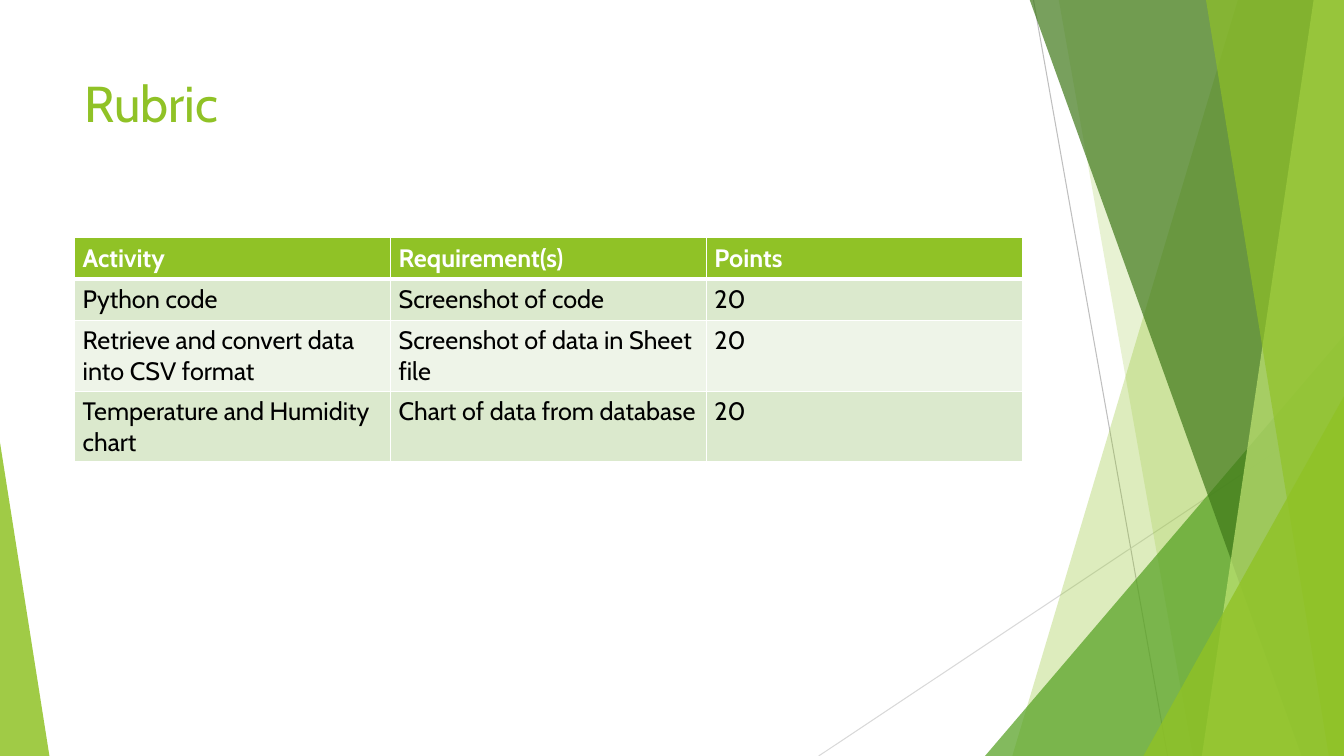
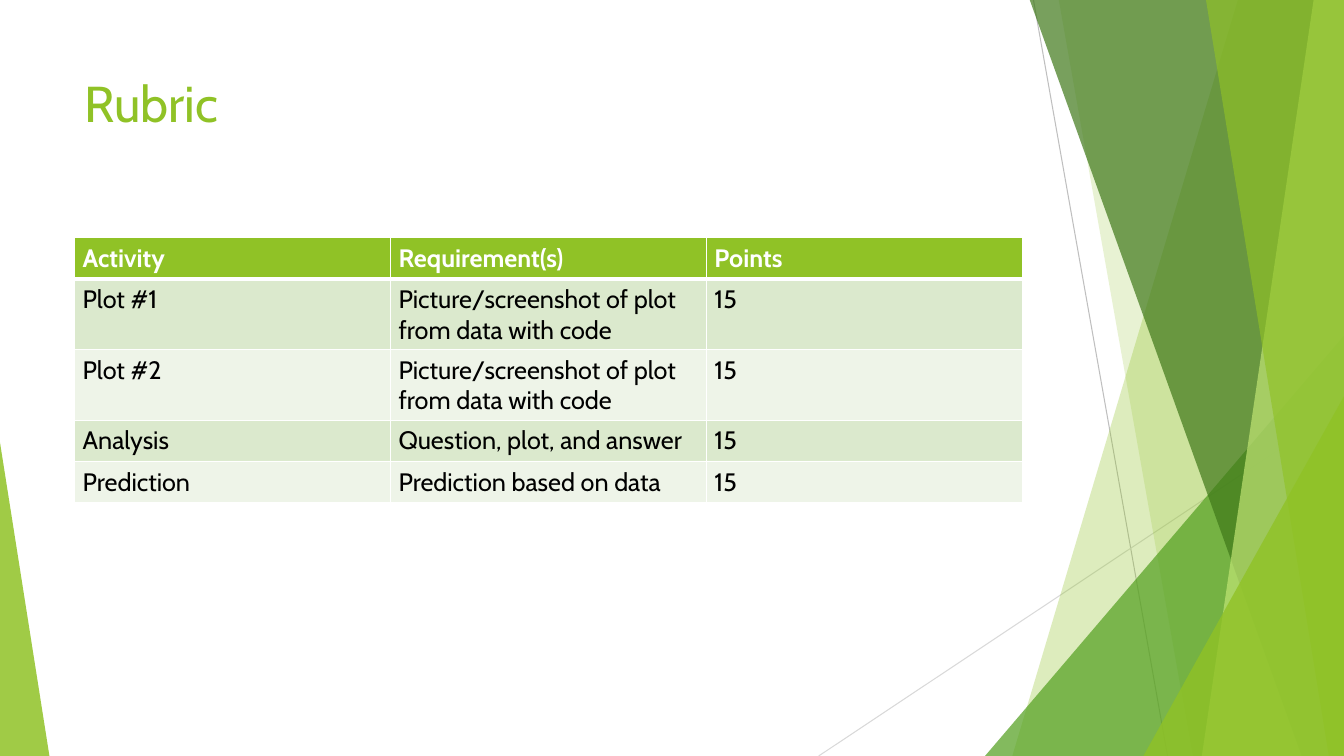
from lxml import etree
from pptx import Presentation
from pptx import util as u
from pptx.dml import color
from pptx.enum import shapes, text
from pptx.oxml import ns

W, H = 13.33, 7.5
FONT = "Cabin"
LIME, GREEN, FOREST, PALE = "90C226", "54A021", "3F7819", "C0E474"
WHITE, BLACK = "FFFFFF", "000000"
BANDS = ("DBE9CD", "EEF4E8")
TITLE_BOX = (0.74, 0.67, 9.4, 1.44)
TABLE_BOX = (0.74, 2.36, 9.4)
ROW_H = 0.41
HEADER = ("Activity", "Requirement(s)", "Points")
RUBRICS = [
    [
        ("Python code", "Screenshot of code", "20"),
        ("Retrieve and convert data into CSV format", "Screenshot of data in Sheet file", "20"),
        ("Temperature and Humidity chart", "Chart of data from database", "20"),
    ],
    [
        ("Plot #1", "Picture/screenshot of plot from data with code", "15"),
        ("Plot #2", "Picture/screenshot of plot from data with code", "15"),
        ("Analysis", "Question, plot, and answer", "15"),
        ("Prediction", "Prediction based on data", "15"),
    ],
]


def rgb(value):
    """Turn a hex string into a colour."""
    return color.RGBColor.from_string(value)


def style_run(r, size, hue, bold=False):
    """Set the font of a run."""
    r.font.name = FONT
    r.font.size = u.Pt(size)
    r.font.bold = bold
    r.font.color.rgb = rgb(hue)


def paint(sp, hue, opacity):
    """Fill a shape with a translucent colour and no outline."""
    sp.shadow.inherit = False
    sp.line.fill.background()
    sp.fill.solid()
    sp.fill.fore_color.rgb = rgb(hue)
    clr = sp.fill._xPr.find(".//" + ns.qn("a:srgbClr"))
    etree.SubElement(clr, ns.qn("a:alpha"), val=str(opacity * 1000))


def add_ray(group, start, end, hue):
    """Draw a thin straight line."""
    points = [u.Inches(v) for v in (*start, *end)]
    ray = group.shapes.add_connector(shapes.MSO_CONNECTOR.STRAIGHT, *points)
    ray.line.width = u.Pt(0.75)
    ray.line.color.rgb = rgb(hue)
    etree.SubElement(ray._element.spPr, ns.qn("a:effectLst"))


def add_facet(group, top_x, bottom_x, hue, opacity):
    """Draw a full-height panel from a slanted left edge to the right slide edge."""
    outline = [(top_x, -0.01), (W, -0.01), (W, H), (bottom_x, H)]
    points = [(u.Inches(x), u.Inches(y)) for x, y in outline]
    builder = group.shapes.build_freeform(*points[0])
    builder.add_line_segments(points[1:], close=True)
    paint(builder.convert_to_shape(), hue, opacity)


def add_wedge(group, left, top, width, apex, hue, opacity):
    """Draw a right triangle standing on the bottom slide edge."""
    box = [u.Inches(v) for v in (left, top, width, H - top)]
    sp = group.shapes.add_shape(shapes.MSO_SHAPE.ISOSCELES_TRIANGLE, *box)
    sp.adjustments[0] = apex
    paint(sp, hue, opacity)


def add_backdrop(slide):
    """Draw the layered green panels shared by all slides."""
    group = slide.shapes.add_group_shape()
    add_ray(group, (10.25, 0), (11.58, H), "BFBFBF")
    add_ray(group, (W, 4.03), (8.12, H), "D9D9D9")
    add_facet(group, 12.28, 10.04, LIME, 30)
    add_facet(group, 10.5, 11.83, LIME, 20)
    add_wedge(group, 9.77, 3.33, W - 9.77, 1, GREEN, 72)
    add_facet(group, 10.21, 12.91, FOREST, 70)
    add_facet(group, 13.03, 11.92, PALE, 70)
    add_facet(group, 11.96, 13.18, LIME, 65)
    add_wedge(group, 11.34, 3.93, W - 11.34, 1, LIME, 80)
    add_wedge(group, 0, 4.39, 0.49, 0, LIME, 85)


def add_title(slide, title, box):
    """Place the slide title at the top of its box."""
    tf = slide.shapes.add_textbox(*[u.Inches(v) for v in box]).text_frame
    tf.word_wrap = True
    tf.vertical_anchor = text.MSO_ANCHOR.TOP
    tf.text = title
    style_run(tf.paragraphs[0].runs[0], 36, LIME)


def add_borders(cell, top, bottom):
    """Give a cell white borders, with top and bottom widths in points."""
    tc_pr = cell._tc.get_or_add_tcPr()
    for side, width in (("L", 1), ("R", 1), ("T", top), ("B", bottom)):
        ln = etree.SubElement(tc_pr, ns.qn("a:ln" + side), w=str(u.Pt(width)))
        fill = etree.SubElement(ln, ns.qn("a:solidFill"))
        etree.SubElement(fill, ns.qn("a:srgbClr"), val=WHITE)


def fill_cell(cell, value, row):
    """Write and style one table cell according to its row."""
    header = row == 0
    add_borders(cell, 3 if row == 1 else 1, 3 if header else 1)
    cell.fill.solid()
    cell.fill.fore_color.rgb = rgb(LIME if header else BANDS[(row - 1) % 2])
    cell.margin_left = cell.margin_right = u.Inches(0.08)
    cell.margin_top = cell.margin_bottom = u.Inches(0.05)
    cell.text_frame.text = value
    style_run(cell.text_frame.paragraphs[0].runs[0], 18, WHITE if header else BLACK, header)


def add_rubric_table(slide, rows, box):
    """Place a header and rubric rows in equal columns."""
    left, top, width = box
    rows = [HEADER, *rows]
    size = [u.Inches(v) for v in (left, top, width, ROW_H * len(rows))]
    table = slide.shapes.add_table(len(rows), len(HEADER), *size).table
    table.horz_banding = False
    for i, values in enumerate(rows):
        table.rows[i].height = u.Inches(ROW_H)
        for j, value in enumerate(values):
            fill_cell(table.cell(i, j), value, i)


def add_rubric_slide(prs, rows):
    """Add one slide with the backdrop, title and rubric table."""
    slide = prs.slides.add_slide(prs.slide_layouts[6])
    add_backdrop(slide)
    add_title(slide, "Rubric", TITLE_BOX)
    add_rubric_table(slide, rows, TABLE_BOX)


def main():
    """Build and save the presentation."""
    prs = Presentation()
    prs.slide_width, prs.slide_height = u.Inches(W), u.Inches(H)
    for rows in RUBRICS:
        add_rubric_slide(prs, rows)
    prs.save("out.pptx")


if __name__ == "__main__":
    main()
